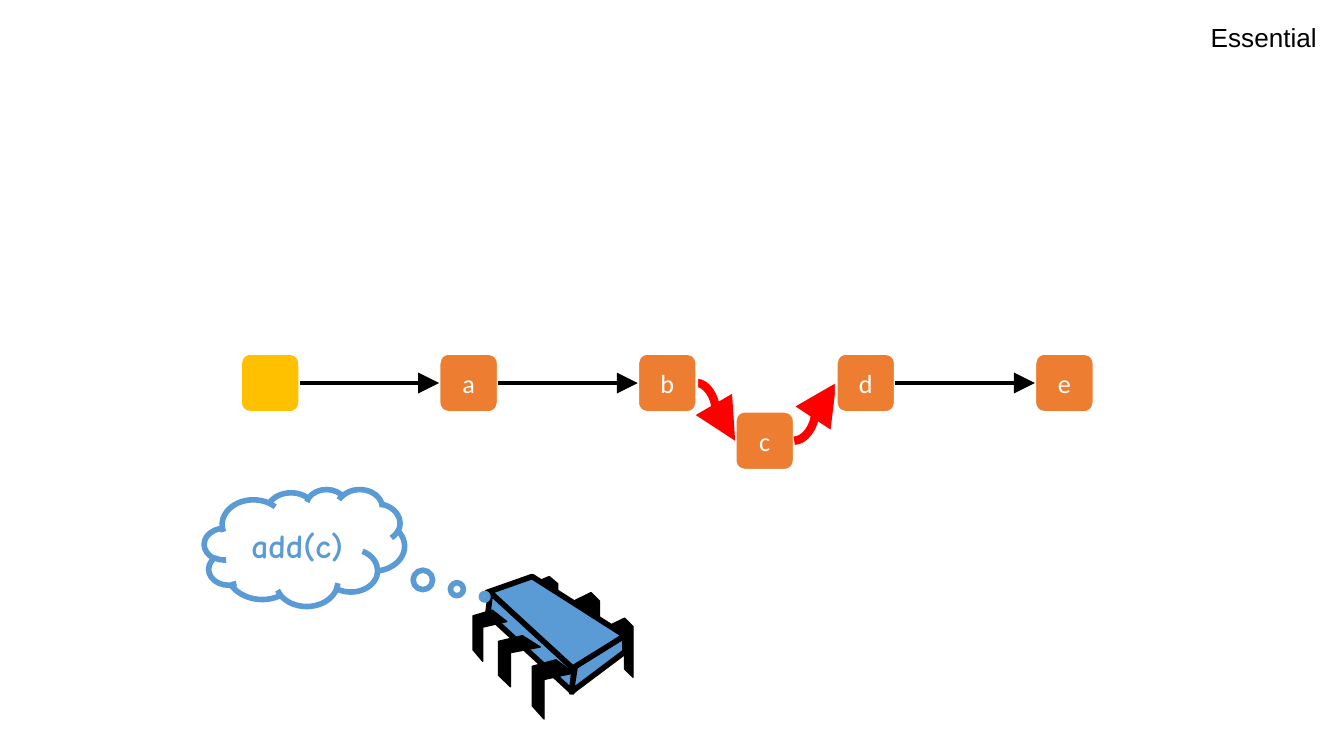
from dataclasses import dataclass
from lxml import etree
from pptx import Presentation
from pptx import util as u
from pptx.dml.color import RGBColor
from pptx.enum import shapes, text
from pptx.oxml.ns import qn

PX = 9144
WIDE = 1000
HIGH = WIDE * 9 / 16


@dataclass(frozen=True)
class Theme:
    node: str = "ED7D31"
    head: str = "FFC000"
    blue: str = "5B9BD5"
    new: str = "FF0000"
    ink: str = "000000"
    paper: str = "FFFFFF"
    small: int = 14
    large: int = 18


T = Theme()
LABELS = ["", "a", "b", "d", "e"]
FIRST, LAST, TOP, SIZE = 179, 770, 263, 44
ADDED = ("c", 547, 306)
LINKS = [(0, 1), (1, 2), (3, 4)]
CLOUD = ("add(c)", 152, 364, 149, 87)
TAG = ("Essential", 891, 11, 100, 34)

REAR = [(0, 1), (2, 0), (3, 1), (3, 7), (2, 6), (2, 2), (0, 3)]
FRONT = [(4, 0), (7, 2), (2, 3), (2, 9), (0, 7), (0, 1)]
BACK_LEGS = [(452, 460, 19, 44), (427, 441, 19, 44), (396, 429, 19, 38)]
NEAR_LEGS = [(396, 491, 31, 44), (371, 473, 31, 38), (352, 454, 25, 38)]
FACES = [
    [(396, 429), (465, 473), (426, 499), (362, 441)],
    [(365, 441), (427, 498), (426, 515), (363, 457)],
    [(465, 473), (465, 485), (425, 515), (428, 496)],
]


def emu(*vals):
    return [u.Emu(round(v * PX)) for v in vals]


def rgb(code):
    return RGBColor.from_string(code)


def paint(shape, fill, line, width):
    shape.shadow.inherit = False
    if fill:
        shape.fill.solid()
        shape.fill.fore_color.rgb = rgb(fill)
    else:
        shape.fill.background()
    shape.line.color.rgb = rgb(line)
    shape.line.width = u.Pt(width)


def write(shape, words, font, size, color, bold=False, align=text.PP_ALIGN.CENTER):
    shape.text_frame.text = words
    par = shape.text_frame.paragraphs[0]
    par.alignment = align
    for run in par.runs:
        run.font.name = font
        run.font.size = u.Pt(size)
        run.font.bold = bold
        run.font.color.rgb = rgb(color)


def node(slide, label, x, y, fill):
    box = slide.shapes.add_shape(
        shapes.MSO_SHAPE.ROUNDED_RECTANGLE, *emu(x, y, SIZE, SIZE))
    paint(box, fill, T.paper, 1.5)
    frame = box.text_frame
    frame.vertical_anchor = text.MSO_ANCHOR.MIDDLE
    frame.margin_left, frame.margin_right = emu(7, 7)
    frame.margin_top, frame.margin_bottom = emu(4, 4)
    if label:
        write(box, label, "Calibri", T.small, T.paper)


def arrow(slide, kind, start, end, color, width):
    link = slide.shapes.add_connector(kind, *emu(*start, *end))
    link.line.color.rgb = rgb(color)
    link.line.width = u.Pt(width)
    props = link._element.spPr
    tip = etree.SubElement(props.find(qn("a:ln")), qn("a:tailEnd"))
    for key, val in [("type", "triangle"), ("w", "lg"), ("len", "lg")]:
        tip.set(key, val)
    etree.SubElement(props, qn("a:effectLst"))


def poly(group, points, fill, width):
    ends = [emu(*p) for p in points]
    pen = group.shapes.build_freeform(*ends[0])
    pen.add_line_segments(ends[1:], close=True)
    paint(pen.convert_to_shape(), fill, T.ink, width)


def legs(group, boxes, grid):
    cols = max(i for i, j in grid)
    rows = max(j for i, j in grid)
    for x, y, w, h in boxes:
        points = [(x + w * i / cols, y + h * j / rows) for i, j in grid]
        poly(group, points, T.ink, 0.75)


def chip(slide):
    group = slide.shapes.add_group_shape()
    legs(group, BACK_LEGS, REAR)
    for face in FACES:
        poly(group, face, T.blue, 3)
    legs(group, NEAR_LEGS, FRONT)


def thought(slide):
    words, *area = CLOUD
    cloud = slide.shapes.add_shape(shapes.MSO_SHAPE.CLOUD_CALLOUT, *emu(*area))
    cloud.adjustments[0] = 0.9
    cloud.adjustments[1] = 0.42
    paint(cloud, None, T.blue, 3)
    cloud.text_frame.vertical_anchor = text.MSO_ANCHOR.MIDDLE
    write(cloud, words, "Comic Neue", T.large, T.blue, bold=True)


def chain(slide):
    step = (LAST - FIRST) / (len(LABELS) - 1)
    lefts = [FIRST + i * step for i in range(len(LABELS))]
    mid = TOP + SIZE / 2
    label, x, y = ADDED
    low = y + SIZE / 2
    node(slide, label, x, y, T.node)
    prev, after = LABELS.index("b"), LABELS.index("d")
    for start, end in [((lefts[prev] + SIZE, mid), (x, low)),
                       ((x + SIZE, low), (lefts[after], mid))]:
        arrow(slide, shapes.MSO_CONNECTOR.CURVE, start, end, T.new, 4.5)
    for i, (label, x) in enumerate(zip(LABELS, lefts)):
        node(slide, label, x, TOP, T.node if i else T.head)
    for a, b in LINKS:
        arrow(slide, shapes.MSO_CONNECTOR.STRAIGHT,
              (lefts[a] + SIZE, mid), (lefts[b], mid), T.ink, 2.25)


def tag(slide):
    words, *area = TAG
    box = slide.shapes.add_textbox(*emu(*area))
    box.text_frame.word_wrap = False
    box.text_frame.auto_size = text.MSO_AUTO_SIZE.SHAPE_TO_FIT_TEXT
    write(box, words, "Arial", T.small, T.ink, align=text.PP_ALIGN.LEFT)


def main():
    deck = Presentation()
    deck.slide_width, deck.slide_height = emu(WIDE, HIGH)
    slide = deck.slides.add_slide(deck.slide_layouts.get_by_name("Blank"))
    chip(slide)
    thought(slide)
    chain(slide)
    tag(slide)
    deck.save("out.pptx")


if __name__ == "__main__":
    main()
